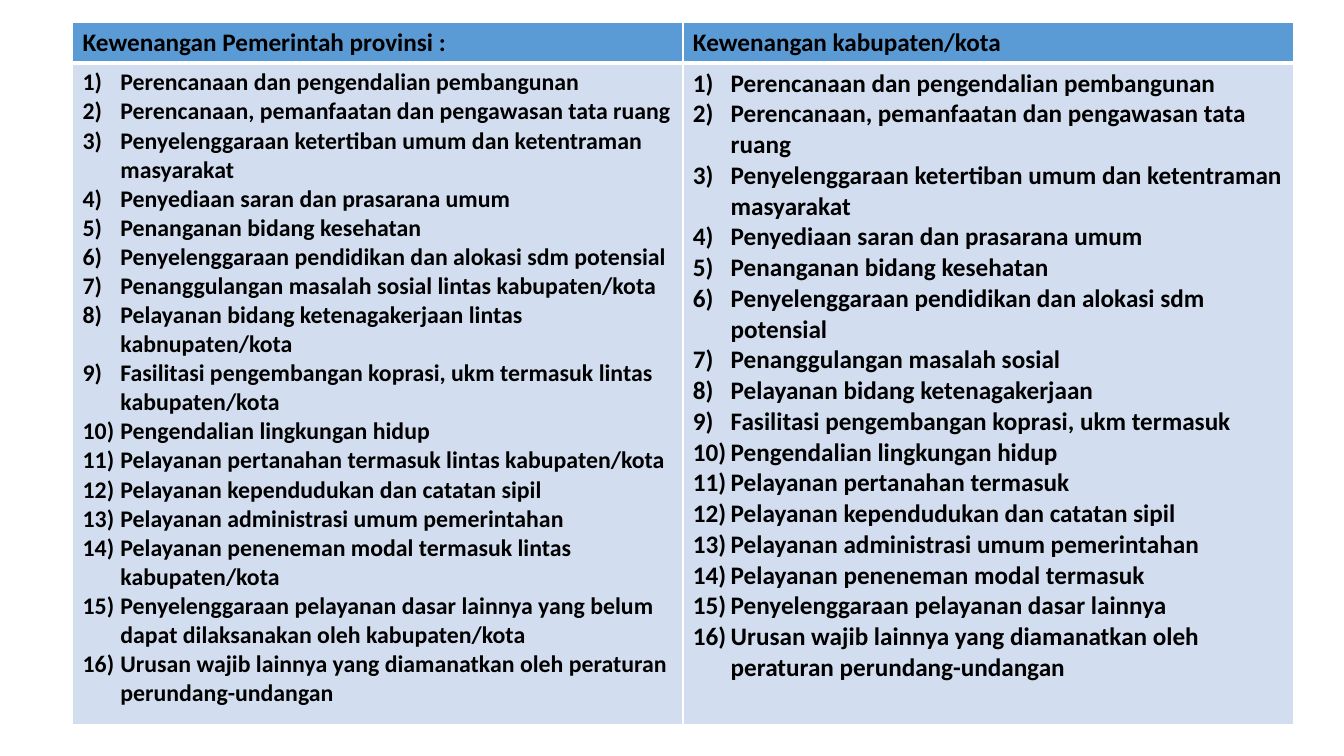
import pptx
import pptx.util
import pptx.dml.color
import pptx.oxml.ns
from lxml import etree

Cm = pptx.util.Cm
Pt = pptx.util.Pt

COLOURS = {"header": "5B9BD5", "body": "D2DEEF", "border": "FFFFFF", "text": "000000"}

COLUMNS = [
    {
        "title": "Kewenangan Pemerintah provinsi :",
        "size": 17,
        "items": [
            "Perencanaan dan pengendalian pembangunan",
            "Perencanaan, pemanfaatan dan pengawasan tata ruang",
            "Penyelenggaraan ketertiban umum dan ketentraman masyarakat",
            "Penyediaan saran dan prasarana umum",
            "Penanganan bidang kesehatan",
            "Penyelenggaraan pendidikan dan alokasi sdm potensial",
            "Penanggulangan masalah sosial lintas kabupaten/kota",
            "Pelayanan bidang ketenagakerjaan lintas kabnupaten/kota",
            "Fasilitasi pengembangan koprasi, ukm termasuk lintas kabupaten/kota",
            "Pengendalian lingkungan hidup",
            "Pelayanan pertanahan termasuk lintas kabupaten/kota",
            "Pelayanan kependudukan dan catatan sipil",
            "Pelayanan administrasi umum pemerintahan",
            "Pelayanan peneneman modal termasuk lintas kabupaten/kota",
            "Penyelenggaraan pelayanan dasar lainnya yang belum dapat dilaksanakan oleh kabupaten/kota",
            "Urusan wajib lainnya yang diamanatkan oleh peraturan perundang-undangan",
        ],
    },
    {
        "title": "Kewenangan kabupaten/kota",
        "size": 18,
        "items": [
            "Perencanaan dan pengendalian pembangunan",
            "Perencanaan, pemanfaatan dan pengawasan tata ruang",
            "Penyelenggaraan ketertiban umum dan ketentraman masyarakat",
            "Penyediaan saran dan prasarana umum",
            "Penanganan bidang kesehatan",
            "Penyelenggaraan pendidikan dan alokasi sdm potensial",
            "Penanggulangan masalah sosial",
            "Pelayanan bidang ketenagakerjaan",
            "Fasilitasi pengembangan koprasi, ukm termasuk",
            "Pengendalian lingkungan hidup",
            "Pelayanan pertanahan termasuk",
            "Pelayanan kependudukan dan catatan sipil",
            "Pelayanan administrasi umum pemerintahan",
            "Pelayanan peneneman modal termasuk",
            "Penyelenggaraan pelayanan dasar lainnya",
            "Urusan wajib lainnya yang diamanatkan oleh peraturan perundang-undangan",
        ],
    },
]

HEADER_SIZE = 18
LEFT, TOP = Cm(1.83), Cm(0.56)
COLUMN_WIDTH = Cm(15.38)
ROW_HEIGHTS = [Cm(1.02), Cm(16.66)]
INDENT = Cm(0.95)
HEADER_BORDERS = {"lnL": 1, "lnR": 1, "lnT": 1, "lnB": 3}
BODY_BORDERS = {"lnL": 1, "lnR": 1, "lnT": 3, "lnB": 1}


def add_element(parent, tag, **attributes):
    element = etree.SubElement(parent, pptx.oxml.ns.qn(tag))
    for name, value in attributes.items():
        element.set(name, str(value))
    return element


def format_cell(cell, fill, borders):
    cell.fill.solid()
    cell.fill.fore_color.rgb = pptx.dml.color.RGBColor.from_string(COLOURS[fill])
    properties = cell._tc.get_or_add_tcPr()
    for position, (side, width) in enumerate(borders.items()):
        line = add_element(properties, "a:" + side, w=Pt(width))
        solid = add_element(line, "a:solidFill")
        add_element(solid, "a:srgbClr", val=COLOURS["border"])
        properties.insert(position, line)


def write_cell(cell, lines, size, numbered):
    font_format = {"name": "Calibri", "size": Pt(size), "bold": True}
    frame = cell.text_frame
    for index, line in enumerate(lines):
        para = frame.add_paragraph() if index else frame.paragraphs[0]
        if numbered:
            properties = para._p.get_or_add_pPr()
            properties.set("marL", str(INDENT))
            properties.set("indent", str(-INDENT))
            add_element(properties, "a:buFont", typeface="+mj-lt")
            add_element(properties, "a:buAutoNum", type="arabicParenR")
        span = para.add_run()
        span.text = line
        for name, value in font_format.items():
            setattr(span.font, name, value)
        span.font.color.rgb = pptx.dml.color.RGBColor.from_string(COLOURS["text"])


def main():
    deck = pptx.Presentation()
    deck.slide_width, deck.slide_height = Cm(33.87), Cm(19.05)
    page = deck.slides.add_slide(deck.slide_layouts[6])
    table = page.shapes.add_table(
        len(ROW_HEIGHTS), len(COLUMNS), LEFT, TOP,
        COLUMN_WIDTH * len(COLUMNS), sum(ROW_HEIGHTS),
    ).table
    for row, height in zip(table.rows, ROW_HEIGHTS):
        row.height = height
    for index, column in enumerate(COLUMNS):
        table.columns[index].width = COLUMN_WIDTH
        header, body = table.cell(0, index), table.cell(1, index)
        format_cell(header, "header", HEADER_BORDERS)
        format_cell(body, "body", BODY_BORDERS)
        write_cell(header, [column["title"]], HEADER_SIZE, False)
        write_cell(body, column["items"], column["size"], True)
    deck.save("out.pptx")


if __name__ == "__main__":
    main()
